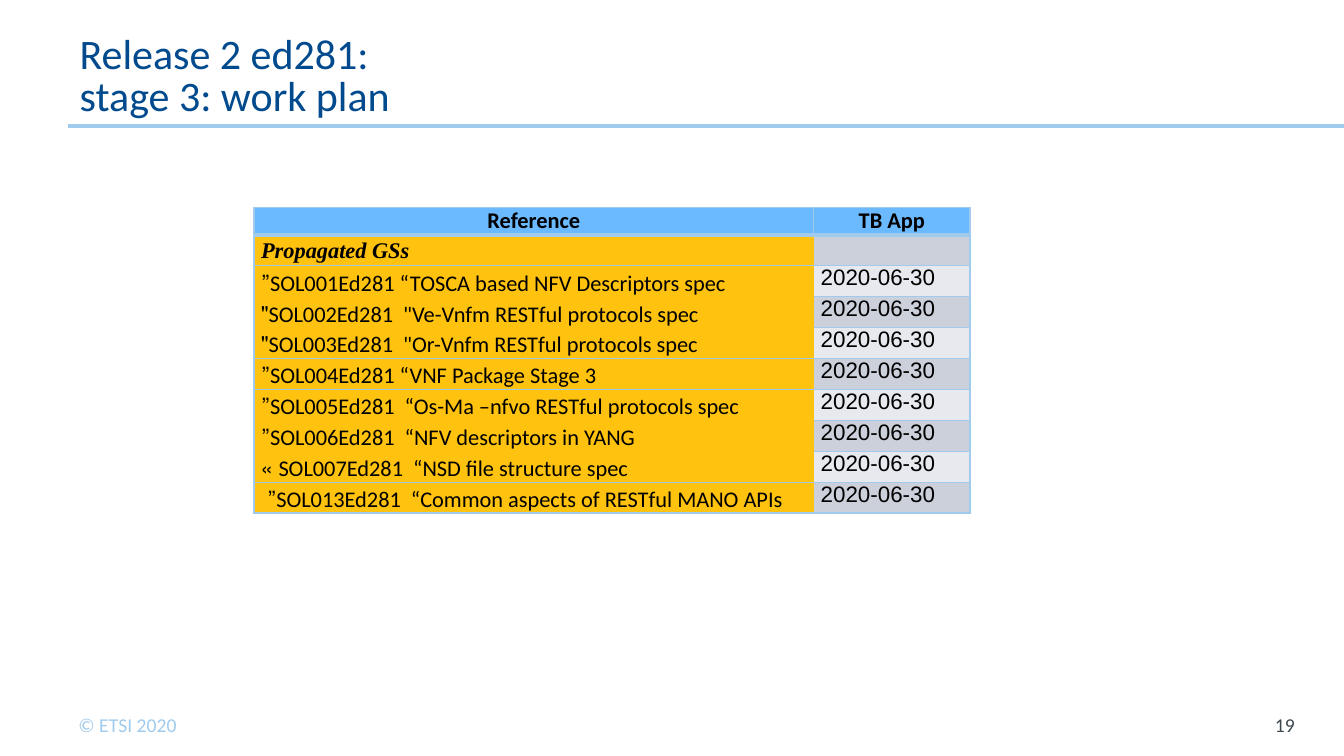
from lxml.etree import SubElement
from pptx import Presentation
from pptx.dml.color import RGBColor
from pptx.enum.shapes import MSO_CONNECTOR
from pptx.enum.text import MSO_ANCHOR as Anchor, PP_ALIGN as Align
from pptx.oxml.ns import qn
from pptx.util import Inches, Pt

TITLE = "Release 2 ed281:\vstage 3: work plan"
COPYRIGHT = "© ETSI 2020"
PAGE = "19"
HEADER = ("Reference", "TB App")
GROUP = ("Propagated GSs", "")
APPROVAL = "2020-06-30"
SPECS = [
    "SOL001Ed281\u00a0“TOSCA based NFV Descriptors spec”",
    "SOL002Ed281\u00a0 \"Ve-Vnfm RESTful protocols spec\"",
    "SOL003Ed281\u00a0 \"Or-Vnfm RESTful protocols spec\"",
    "SOL004Ed281 “VNF Package Stage 3”",
    "SOL005Ed281  “Os-Ma –nfvo RESTful protocols spec”",
    "SOL006Ed281  “NFV descriptors in YANG”",
    "SOL007Ed281  “NSD file structure spec\u00a0»",
    "SOL013Ed281  “Common aspects of RESTful MANO APIs”\u00a0",
]
OPEN_BELOW = {2, 3, 6, 7}
COLUMNS = (5.55, 1.55)
ROW_HEIGHT = 0.27

THEME = dict(
    font="Calibri", serif="Times New Roman", digits="Arial",
    title="004A8D", rule="A0CBED", page="3E484F", ink="000000",
    header="6BB9FF", reference="FFC20E", bands=("E7E9EE", "CCD0DB"),
    title_size=30, table_size=16, footer_size=14,
)


def rgb(key):
    return RGBColor.from_string(THEME[key])


def style(paragraph, size, color, font="font", bold=False, italic=False):
    for run in paragraph.runs:
        run.font.name = THEME[font]
        run.font.size = Pt(THEME[size])
        run.font.color.rgb = rgb(color)
        run.font.bold = bold
        run.font.italic = italic


def set_margins(target, left, top, right, bottom):
    target.margin_left, target.margin_top = Inches(left), Inches(top)
    target.margin_right, target.margin_bottom = Inches(right), Inches(bottom)


def add_text(slide, box, text, size, color, margins, anchor=Anchor.TOP, align=Align.LEFT):
    frame = slide.shapes.add_textbox(*map(Inches, box)).text_frame
    frame.word_wrap = True
    frame.vertical_anchor = anchor
    set_margins(frame, *margins)
    frame.text = text
    paragraph = frame.paragraphs[0]
    paragraph.alignment = align
    style(paragraph, size, color)
    return paragraph


def set_borders(cell, widths):
    properties = cell._tc.get_or_add_tcPr()
    for index, (side, width) in enumerate(widths.items()):
        line = properties.makeelement(qn("a:ln" + side), {"w": str(Pt(width))})
        if width:
            fill = SubElement(line, qn("a:solidFill"))
            SubElement(fill, qn("a:srgbClr"), val=THEME["rule"])
        else:
            SubElement(line, qn("a:noFill"))
        properties.insert(index, line)


def fill_cell(cell, row, column, text):
    is_header, is_reference = row == 0, column == 0
    set_margins(cell, 0.07, 0, 0.07, 0)
    cell.text = text
    paragraph = cell.text_frame.paragraphs[0]
    paragraph.alignment = Align.CENTER if is_header else Align.LEFT
    is_group = row == 1
    style(paragraph, "table_size", "ink", "serif" if is_group else "font",
          bold=is_header or is_group, italic=is_group)
    if not is_header:
        paragraph._p.get_or_add_pPr().set("rtl", "1")
        if is_reference:
            paragraph.line_spacing = 1.15
    for run in paragraph.runs:
        if row > 1 and not is_reference:
            SubElement(run.font._element, qn("a:cs"), typeface=THEME["digits"])
    if not text:
        SubElement(paragraph._p, qn("a:endParaRPr"), sz=str(THEME["table_size"] * 100))

    cell.fill.solid()
    if is_header:
        cell.fill.fore_color.rgb = rgb("header")
    elif is_reference:
        cell.fill.fore_color.rgb = rgb("reference")
    else:
        cell.fill.fore_color.rgb = RGBColor.from_string(THEME["bands"][row % 2])
    above = 3 if row == 1 else 0 if is_reference and row - 1 in OPEN_BELOW else 1
    below = 3 if is_header else 0 if is_reference and row in OPEN_BELOW else 1
    inner = 1 if is_header else 0
    set_borders(cell, {
        "L": 1 if is_reference else inner,
        "R": inner if is_reference else 1,
        "T": above,
        "B": below,
    })


def add_plan(slide):
    plan = [HEADER, GROUP] + [(spec, APPROVAL) for spec in SPECS]
    table = slide.shapes.add_table(
        len(plan), len(COLUMNS), Inches(2.52), Inches(2.06),
        Inches(sum(COLUMNS)), Inches(ROW_HEIGHT * len(plan))).table
    table.first_row = table.horz_banding = False
    for column, width in zip(table.columns, COLUMNS):
        column.width = Inches(width)
    for row, entry in enumerate(plan):
        table.rows[row].height = Inches(ROW_HEIGHT)
        for column, text in enumerate(entry):
            fill_cell(table.cell(row, column), row, column, text)


def main():
    deck = Presentation()
    deck.slide_width, deck.slide_height = Inches(13.33), Inches(7.5)
    slide = deck.slides.add_slide(deck.slide_layouts[6])

    rule = slide.shapes.add_connector(
        MSO_CONNECTOR.STRAIGHT, Inches(0.67), Inches(1.25), Inches(13.33), Inches(1.25))
    rule.line.color.rgb = rgb("rule")
    rule.line.width = Pt(2.25)
    SubElement(rule._element.spPr, qn("a:effectLst"))

    add_text(slide, (0.68, 7.02, 1.34, 0.34), COPYRIGHT, "footer_size", "rule",
             (0.1, 0.05, 0.1, 0.05))
    add_text(slide, (12.25, 6.99, 0.69, 0.4), PAGE, "footer_size", "page",
             (0, 0.05, 0.1, 0.05), Anchor.MIDDLE, Align.RIGHT)
    title = add_text(slide, (0.67, 0.3, 10.42, 0.95), TITLE, "title_size", "title",
                     (0.12, 0.06, 0.12, 0.06), Anchor.BOTTOM)
    title.line_spacing = Pt(30)
    add_plan(slide)
    deck.save("out.pptx")


if __name__ == "__main__":
    main()
